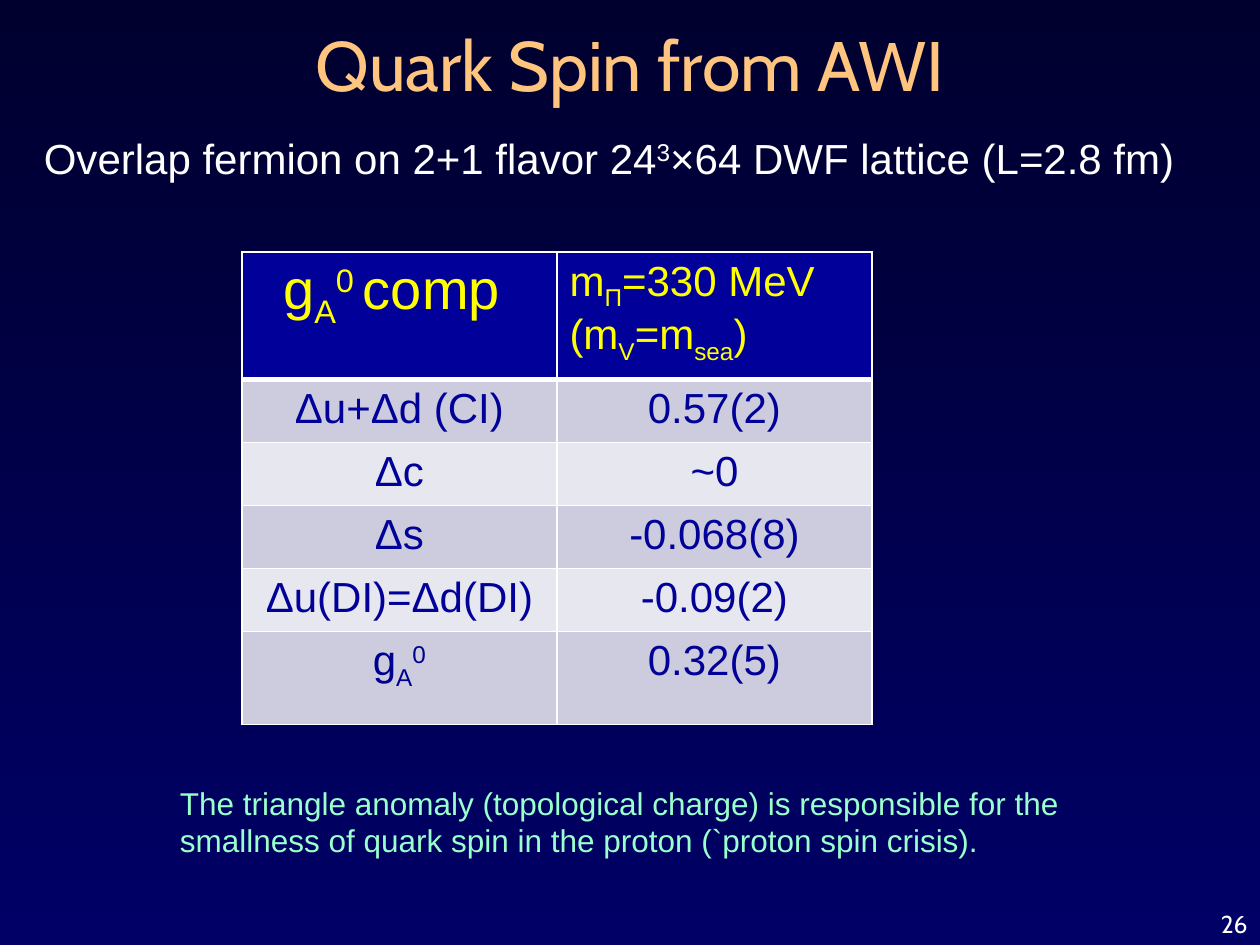
from lxml.etree import SubElement
from pptx import Presentation
from pptx.dml.color import RGBColor
from pptx.enum.text import MSO_ANCHOR, PP_ALIGN
from pptx.oxml.ns import qn
from pptx.util import Inches, Pt

HUES = {
    "top": "00002F", "base": "000066", "title": "FFC57F", "white": "FFFFFF",
    "head": "010199", "label": "FFFF00", "body": "010199", "axial": "000090",
    "odd": "CCCCDE", "even": "E7E7EF", "note": "99FFCC",
}
SHIFTS = {"_": "-25000", "^": "30000"}
LEFT, MID, RIGHT = PP_ALIGN.LEFT, PP_ALIGN.CENTER, PP_ALIGN.RIGHT


class Deck:
    """Holds the style and the current slide; "|_" lowers and "|^" raises a piece of text."""

    def __init__(self):
        self.show = Presentation()
        self.show.slide_width, self.show.slide_height = Inches(10), Inches(7.5)
        self.slide = self.show.slides.add_slide(self.show.slide_layouts[6])

    def hue(self, name):
        return RGBColor.from_string(HUES[name])

    def back(self, *names):
        fill = self.slide.background.fill
        fill.gradient()
        fill.gradient_angle = 270
        for stop, name in zip(fill.gradient_stops, names):
            stop.color.rgb = self.hue(name)

    def words(self, frame, text, size, color, align=LEFT, font="Arial"):
        for num, line in enumerate(text.split("\n")):
            para = frame.add_paragraph() if num else frame.paragraphs[0]
            para.alignment = align
            for piece in line.split("|"):
                run = para.add_run()
                shift = SHIFTS.get(piece[:1])
                run.text = piece[1:] if shift else piece
                run.font.name, run.font.size = font, Pt(size)
                run.font.bold = False
                run.font.color.rgb = self.hue(color)
                if shift:
                    run._r.get_or_add_rPr().set("baseline", shift)

    def text(self, box, text, size, color, align=LEFT, font="Arial", anchor=MSO_ANCHOR.TOP):
        frame = self.slide.shapes.add_textbox(*map(Inches, box)).text_frame
        frame.word_wrap = True
        frame.vertical_anchor = anchor
        self.words(frame, text, size, color, align, font)

    def edge(self, cell, base):
        props = cell._tc.get_or_add_tcPr()
        for num, (side, width) in enumerate(zip("LRTB", (1, 1, 1, base))):
            line = SubElement(props, qn("a:ln" + side), w=str(Pt(width)))
            fill = SubElement(line, qn("a:solidFill"))
            SubElement(fill, qn("a:srgbClr"), val=HUES["white"])
            props.insert(num, line)

    def table(self, box, highs, rows):
        table = self.slide.shapes.add_table(len(rows), len(rows[0]), *map(Inches, box)).table
        for r, (high, row) in enumerate(zip(highs, rows)):
            table.rows[r].height = Inches(high)
            for c, (text, size, color, align) in enumerate(row):
                cell = table.cell(r, c)
                cell.fill.solid()
                cell.fill.fore_color.rgb = self.hue("head" if r == 0 else "odd" if r % 2 else "even")
                self.edge(cell, 1 if r else 3)
                self.words(cell.text_frame, text, size, color, align)

    def save(self):
        self.show.save("out.pptx")


def main():
    deck = Deck()
    deck.back("top", "base")
    deck.text((0.5, -0.25, 9, 1.51), "Quark Spin from AWI", 40, "title", MID, "Cabin", MSO_ANCHOR.MIDDLE)
    deck.text((7.67, 6.98, 2.33, 0.52), "26", 14, "white", RIGHT, "Cabin", MSO_ANCHOR.BOTTOM)
    data = [
        ("Δu+Δd (CI)", "0.57(2)"),
        ("Δc", "~0"),
        ("Δs", "-0.068(8)"),
        ("Δu(DI)=Δd(DI)", "-0.09(2)"),
        ("g|_A|^0", "0.32(5)"),
    ]
    head = [
        ("g|_A|^0 |comp ", 32, "label", MID),
        ("m|_Π|=330 MeV\n(m|_V|=m|_sea|)", 24, "label", LEFT),
    ]
    rows = [head] + [
        [(name, 24, "axial" if name[0] == "g" else "body", MID), (value, 24, "body", MID)]
        for name, value in data
    ]
    deck.table((1.92, 2, 5, 3.54), [0.88] + [0.48] * 4 + [0.74], rows)
    deck.text((0.25, 1, 9.33, 0.5), "Overlap fermion on 2+1 flavor 24|^3|×64 DWF lattice (L=2.8 fm)", 24, "white")
    deck.text(
        (1.33, 6.17, 7.75, 0.71),
        "The triangle anomaly (topological charge) is responsible for the "
        "smallness of quark spin in the proton (`proton spin crisis).",
        18, "note",
    )
    deck.save()


if __name__ == "__main__":
    main()
